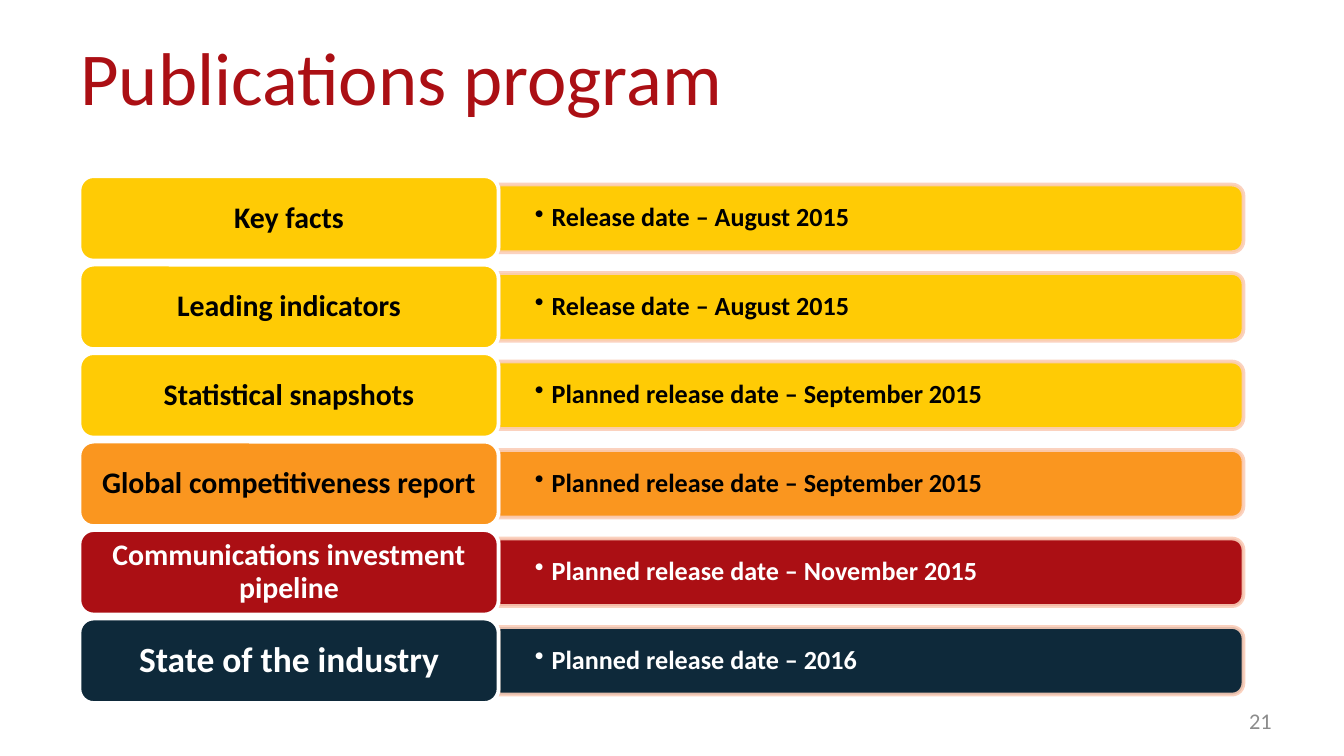
from lxml.etree import SubElement
from pptx import Presentation
from pptx.dml.color import RGBColor
from pptx.enum.shapes import MSO_SHAPE
from pptx.enum.text import MSO_ANCHOR, PP_ALIGN
from pptx.oxml.ns import qn
from pptx.util import Pt

YELLOW = RGBColor(0xFF, 0xCB, 0x05)
ORANGE = RGBColor(0xFA, 0x96, 0x1F)
RED = RGBColor(0xAB, 0x0F, 0x14)
NAVY = RGBColor(0x0E, 0x29, 0x3A)
PEACH = RGBColor(0xFB, 0xCE, 0xB9)
GREY = RGBColor(0x8C, 0x8C, 0x8C)
BLACK = RGBColor(0, 0, 0)
WHITE = RGBColor(0xFF, 0xFF, 0xFF)

prs = Presentation()
prs.slide_width, prs.slide_height = Pt(720), Pt(405)
slide = prs.slides.add_slide(prs.slide_layouts[6])


def write(shape, text, size, color, bold=False, align=PP_ALIGN.LEFT,
          anchor=MSO_ANCHOR.MIDDLE, insets=(7.2, 3.6, 7.2, 3.6)):
    frame = shape.text_frame
    frame.word_wrap = True
    frame.vertical_anchor = anchor
    (frame.margin_left, frame.margin_top,
     frame.margin_right, frame.margin_bottom) = map(Pt, insets)
    frame.text = text
    paragraph = frame.paragraphs[0]
    paragraph.alignment = align
    font = paragraph.runs[0].font
    font.name, font.size, font.bold = "Calibri", Pt(size), bold
    font.color.rgb = color
    return paragraph


def style(shape, fill, line):
    shape.shadow.inherit = False
    shape.fill.solid()
    shape.fill.fore_color.rgb = fill
    shape.line.color.rgb = line
    shape.line.width = Pt(2)


# Title
title = slide.shapes.add_textbox(Pt(36), Pt(16.6), Pt(603.4), Pt(67.7))
write(title, "Publications program", 40, RED, anchor=MSO_ANCHOR.TOP,
      insets=(7.2, 0, 0, 0))

# Publications: name, release, row colour, text colour, name size
PUBLICATIONS = [
    ("Key facts", "Release date – August 2015", YELLOW, BLACK, 16),
    ("Leading indicators", "Release date – August 2015", YELLOW, BLACK, 16),
    ("Statistical snapshots", "Planned release date – September 2015", YELLOW, BLACK, 16),
    ("Global competitiveness report", "Planned release date – September 2015", ORANGE, BLACK, 16),
    ("Communications investment pipeline", "Planned release date – November 2015", RED, WHITE, 16),
    ("State of the industry", "Planned release date – 2016", NAVY, WHITE, 19),
]
LEFT, FIRST_CENTER, PITCH = 42.6, 117, 47.4
NAME_WIDTH, NAME_HEIGHT = 224.5, 45.2
BAR_LENGTH, BAR_HEIGHT = 399, 36.2
bar_left = LEFT + NAME_WIDTH

for row, (name, release, fill, text_color, name_size) in enumerate(PUBLICATIONS):
    center = FIRST_CENTER + row * PITCH

    # Release bar, turned so that its rounded corners face right
    bar = slide.shapes.add_shape(
        MSO_SHAPE.ROUND_2_SAME_RECTANGLE,
        Pt(bar_left + (BAR_LENGTH - BAR_HEIGHT) / 2), Pt(center - BAR_LENGTH / 2),
        Pt(BAR_HEIGHT), Pt(BAR_LENGTH))
    bar.rotation = 90
    style(bar, fill, PEACH)
    line_color = bar.line.fill._xPr.find(".//" + qn("a:srgbClr"))
    SubElement(line_color, qn("a:alpha"), val="90000")

    # Release date with bullet
    date = slide.shapes.add_textbox(Pt(bar_left), Pt(center - 16.2), Pt(397.4), Pt(32.4))
    paragraph = write(date, release, 14, text_color, bold=True,
                      insets=(19.4, 10, 19.4, 10))
    paragraph.line_spacing = 0.9
    properties = paragraph._p.get_or_add_pPr()
    properties.set("marL", str(Pt(9)))
    properties.set("indent", str(-Pt(9)))
    SubElement(properties, qn("a:buChar"), char="•")

    # Publication name
    label = slide.shapes.add_shape(
        MSO_SHAPE.ROUNDED_RECTANGLE, Pt(LEFT), Pt(center - NAME_HEIGHT / 2),
        Pt(NAME_WIDTH), Pt(NAME_HEIGHT))
    style(label, fill, WHITE)
    paragraph = write(label, name, name_size, text_color, bold=True,
                      align=PP_ALIGN.CENTER, insets=(5, 2, 5, 2))
    paragraph.line_spacing = 0.9

# Page number
page_number = slide.shapes.add_textbox(Pt(520.6), Pt(375), Pt(167.8), Pt(21.6))
write(page_number, "21", 12, GREY, align=PP_ALIGN.RIGHT)

prs.save("out.pptx")
